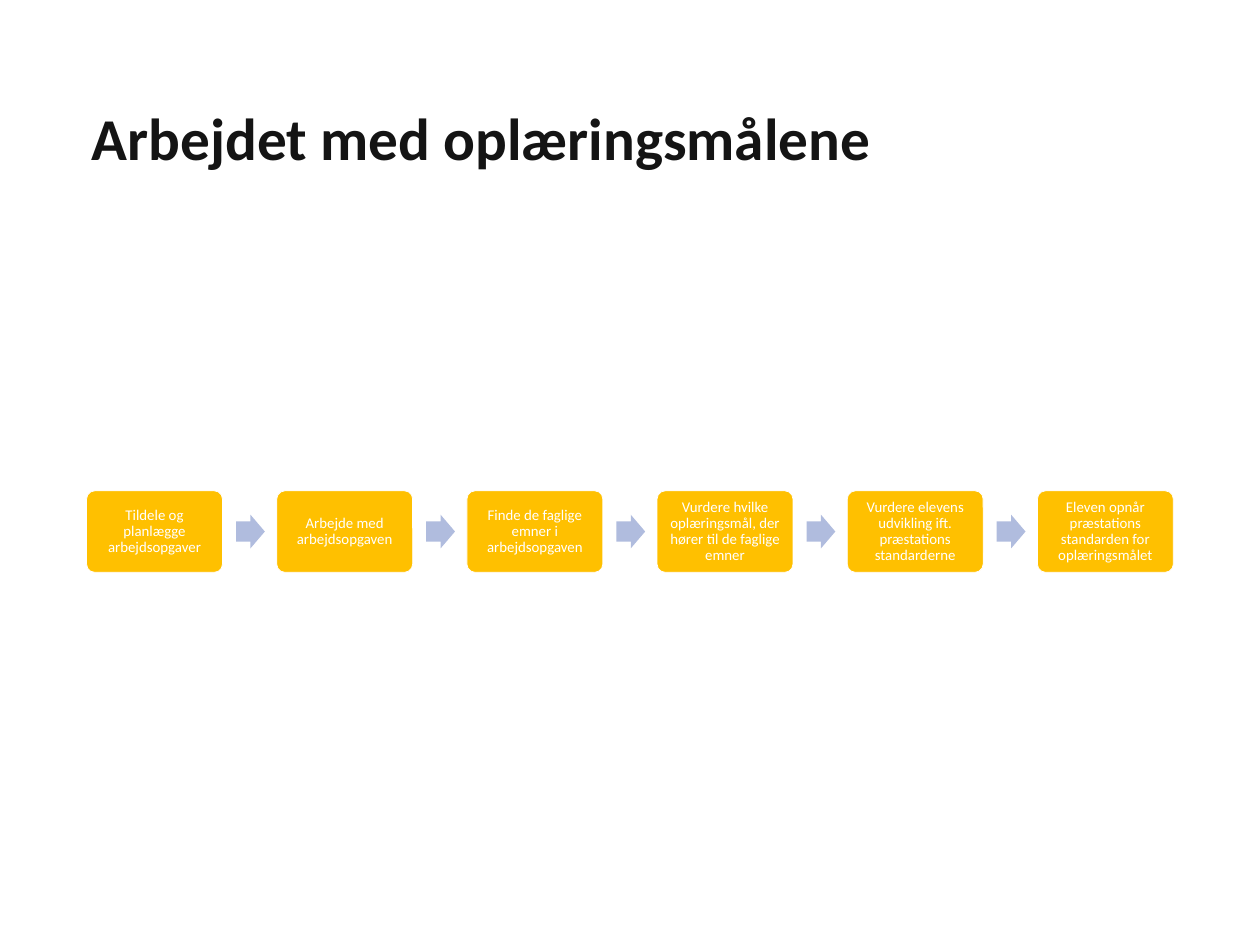
from dataclasses import dataclass

from pptx import Presentation
from pptx.dml.color import RGBColor
from pptx.enum.shapes import MSO_SHAPE
from pptx.enum.text import MSO_ANCHOR, MSO_AUTO_SIZE, PP_ALIGN
from pptx.util import Pt


@dataclass(frozen=True)
class Theme:
    """Hold the colours, font and type sizes of the slide."""
    font: str = "Calibri"
    title_size: int = 80
    step_size: int = 20
    title_color: RGBColor = RGBColor(0x14, 0x14, 0x14)
    step_fill: RGBColor = RGBColor(0xFF, 0xC0, 0x00)
    arrow_fill: RGBColor = RGBColor(0xB0, 0xBC, 0xDE)
    white: RGBColor = RGBColor(0xFF, 0xFF, 0xFF)


THEME = Theme()
SLIDE_WIDTH, SLIDE_HEIGHT = 1700.8, 1275.6
LEFT = 116.9
CONTENT_WIDTH = 1467
STEP_WIDTH, STEP_HEIGHT = 183.4, 110
STEP_PITCH = 256.7
ROW_MIDDLE = 717.5
ARROW_OFFSET = 201.7
ARROW_WIDTH, ARROW_HEIGHT = 38.9, 45.5

STEPS = [
    "Tildele og planlægge arbejdsopgaver",
    "Arbejde med arbejdsopgaven",
    "Finde de faglige emner i arbejdsopgaven",
    "Vurdere hvilke oplæringsmål, der hører til de faglige emner",
    "Vurdere elevens udvikling ift. præstations standarderne",
    "Eleven opnår præstations standarden for oplæringsmålet",
]


def write_text(shape, text, size, color, alignment, bold=False):
    """Write one vertically centred paragraph into a shape."""
    text_frame = shape.text_frame
    text_frame.text = text
    text_frame.word_wrap = True
    text_frame.auto_size = MSO_AUTO_SIZE.NONE
    text_frame.vertical_anchor = MSO_ANCHOR.MIDDLE
    paragraph = text_frame.paragraphs[0]
    paragraph.alignment = alignment
    paragraph.line_spacing = 0.9
    font = paragraph.runs[0].font
    font.name = THEME.font
    font.size = Pt(size)
    font.bold = bold
    font.color.rgb = color


def set_title(slide, text):
    """Place and format the title placeholder."""
    title = slide.shapes.title
    title.left, title.top = Pt(LEFT), Pt(67.9)
    title.width, title.height = Pt(CONTENT_WIDTH), Pt(246.5)
    write_text(title, text, THEME.title_size, THEME.title_color, PP_ALIGN.LEFT, bold=True)


def add_row_shape(slide, kind, left, width, height, fill):
    """Add a filled shape centred on the middle of the process row."""
    shape = slide.shapes.add_shape(
        kind, Pt(left), Pt(ROW_MIDDLE - height / 2), Pt(width), Pt(height))
    shape.shadow.inherit = False
    shape.fill.solid()
    shape.fill.fore_color.rgb = fill
    return shape


def add_step(slide, left, text):
    """Add a rounded box with the text of one process step."""
    step = add_row_shape(
        slide, MSO_SHAPE.ROUNDED_RECTANGLE, left, STEP_WIDTH, STEP_HEIGHT, THEME.step_fill)
    step.adjustments[0] = 0.1
    step.line.color.rgb = THEME.white
    step.line.width = Pt(1)
    text_frame = step.text_frame
    text_frame.margin_left = text_frame.margin_right = Pt(6)
    text_frame.margin_top = text_frame.margin_bottom = Pt(6)
    write_text(step, text, THEME.step_size, THEME.white, PP_ALIGN.CENTER)


def add_arrow(slide, left):
    """Add a block arrow that leads to the next step."""
    arrow = add_row_shape(
        slide, MSO_SHAPE.RIGHT_ARROW, left, ARROW_WIDTH, ARROW_HEIGHT, THEME.arrow_fill)
    arrow.adjustments[0] = 0.6
    arrow.adjustments[1] = 0.5
    arrow.line.fill.background()


def main():
    """Build and save the slide."""
    presentation = Presentation()
    presentation.slide_width = Pt(SLIDE_WIDTH)
    presentation.slide_height = Pt(SLIDE_HEIGHT)
    slide = presentation.slides.add_slide(presentation.slide_layouts[5])
    set_title(slide, "Arbejdet med oplæringsmålene")
    for index, text in enumerate(STEPS):
        left = LEFT + index * STEP_PITCH
        add_step(slide, left, text)
        if index < len(STEPS) - 1:
            add_arrow(slide, left + ARROW_OFFSET)
    presentation.save("out.pptx")


if __name__ == "__main__":
    main()
